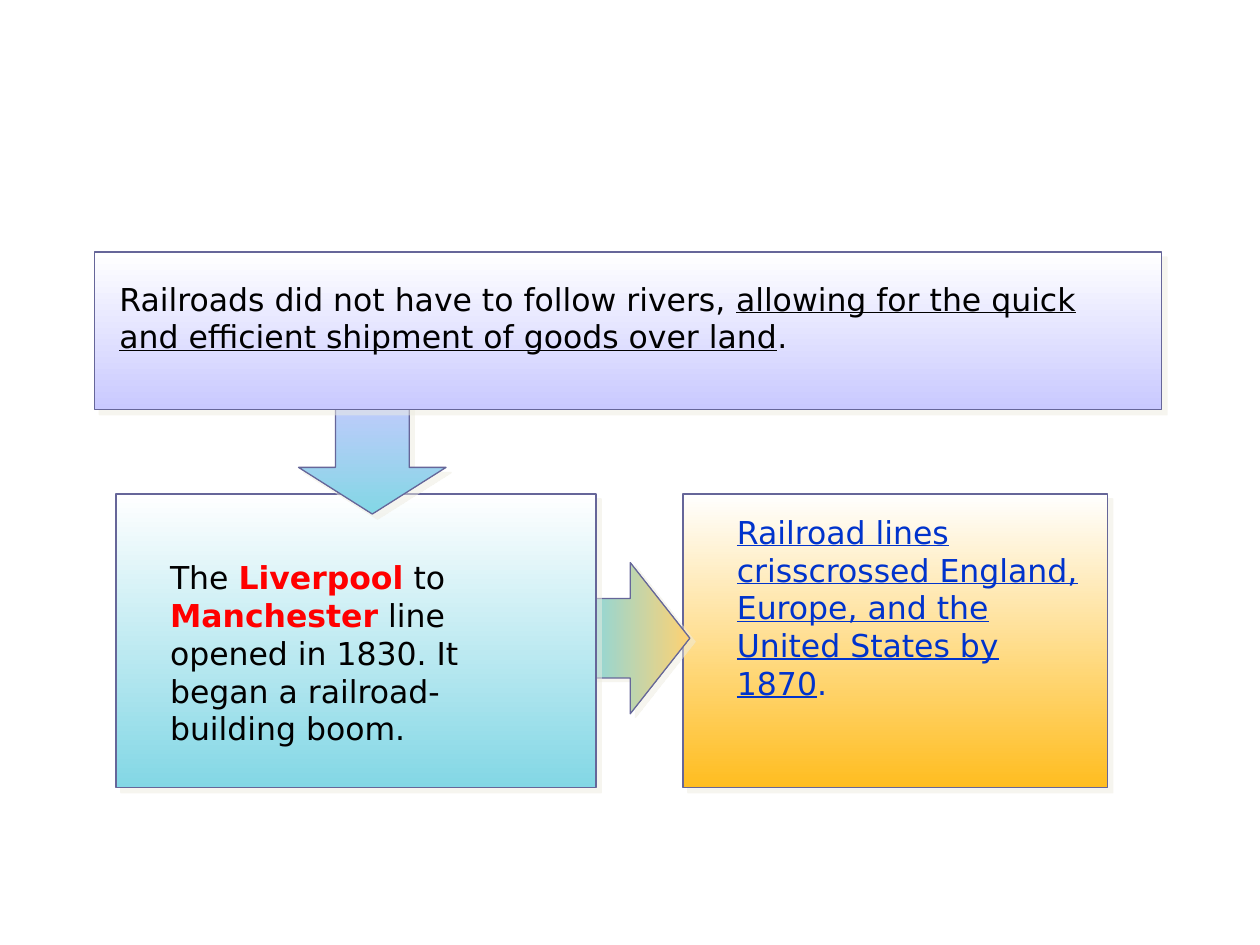
from lxml import etree
from pptx import Presentation
from pptx.dml.color import RGBColor
from pptx.enum.shapes import MSO_SHAPE
from pptx.oxml.ns import qn
from pptx.util import Inches, Pt

RECT = MSO_SHAPE.RECTANGLE
ARROW = MSO_SHAPE.DOWN_ARROW

WHITE = RGBColor(0xFF, 0xFF, 0xFF)
BLACK = RGBColor(0x00, 0x00, 0x00)
RED = RGBColor(0xFF, 0x00, 0x00)
BLUE = RGBColor(0x00, 0x33, 0xCC)
LILAC = RGBColor(0xC9, 0xC9, 0xFF)
TEAL = RGBColor(0x83, 0xD7, 0xE5)
GOLD = RGBColor(0xFF, 0xBD, 0x20)
SAND = RGBColor(0xFE, 0xD2, 0x73)
EDGE = RGBColor(0x66, 0x66, 0x99)
SHADE = RGBColor(0xEE, 0xEC, 0xE1)

PLAIN = {"bold": False, "underline": False}
BOLD = {"bold": True, "underline": False}
UNDER = {"bold": False, "underline": True}


class Page:
    font = "DejaVu Sans"
    size = Pt(18)

    def __init__(self, slide):
        self.slide = slide

    def shade(self, shape, dist, angle):
        """Give the shape a soft offset shadow."""
        shape.shadow.inherit = False
        effects = shape._element.spPr.find(qn("a:effectLst"))
        outer = etree.SubElement(effects, qn("a:outerShdw"), dist=str(Pt(dist)),
                                 dir=str(angle * 60000), algn="ctr", rotWithShape="0")
        color = etree.SubElement(outer, qn("a:srgbClr"), val=str(SHADE))
        etree.SubElement(color, qn("a:alpha"), val="50000")

    def block(self, kind, box, start, end, width=1, dist=4.2, angle=45):
        """Draw a shape whose fill fades from start (top) to end (bottom)."""
        shape = self.slide.shapes.add_shape(kind, *map(Inches, box))
        shape.fill.gradient()
        shape.fill.gradient_angle = 270
        for stop, color in zip(shape.fill.gradient_stops, (start, end)):
            stop.color.rgb = color
        shape.line.color.rgb = EDGE
        shape.line.width = Pt(width)
        self.shade(shape, dist, angle)
        return shape

    def arrow(self, box, start, end, shaft, head, turn=0, **style):
        shape = self.block(ARROW, box, start, end, width=0.75, **style)
        shape.adjustments[0] = shaft
        shape.adjustments[1] = head
        shape.rotation = turn

    def text(self, box, runs, left=0.1, top=0.05, right=0.1):
        frame = self.slide.shapes.add_textbox(*map(Inches, box)).text_frame
        margins = {"margin_left": left, "margin_top": top, "margin_right": right}
        for name, value in margins.items():
            setattr(frame, name, Inches(value))
        frame.word_wrap = True
        for words, color, style in runs:
            run = frame.paragraphs[0].add_run()
            run.text = words
            run.font.color.rgb = color
            look = {"name": self.font, "size": self.size, **style}
            for name, value in look.items():
                setattr(run.font, name, value)


def main():
    deck = Presentation()
    deck.slide_width, deck.slide_height = Inches(10), Inches(7.5)
    page = Page(deck.slides.add_slide(deck.slide_layouts[6]))
    top, height = 3.92, 2.33

    page.block(RECT, (5.42, top, 3.37, height), WHITE, GOLD)
    page.text((5.75, 4.02, 2.92, 1.95), [
        ("Railroad lines crisscrossed England, Europe, and the United States by 1870",
         BLUE, UNDER),
        (".", BLUE, PLAIN),
    ])

    page.arrow((4.44, 4.63, 1.2, 0.87), TEAL, SAND, 0.525, 0.543,
               turn=270, dist=3.6, angle=34)
    page.block(RECT, (0.92, top, 3.81, height), WHITE, TEAL)
    page.text((1.06, 4.06, 3.5, 2.04), [
        ("The ", BLACK, PLAIN),
        ("Liverpool", RED, BOLD),
        (" to ", BLACK, PLAIN),
        ("Manchester", RED, BOLD),
        (" line opened in 1830. It began a railroad-building boom.", BLACK, PLAIN),
    ], left=0.29, top=0.37, right=0.25)

    page.arrow((2.37, 3.08, 1.17, 1), LILAC, TEAL, 0.5, 0.37)
    page.block(RECT, (0.75, 2, 8.47, 1.25), WHITE, LILAC)
    page.text((0.85, 2.17, 8.3, 0.83), [
        ("Railroads did not have to follow rivers, ", BLACK, PLAIN),
        ("allowing for the quick and efficient shipment of goods over land",
         BLACK, UNDER),
        (".", BLACK, PLAIN),
    ])

    deck.save("out.pptx")


if __name__ == "__main__":
    main()
